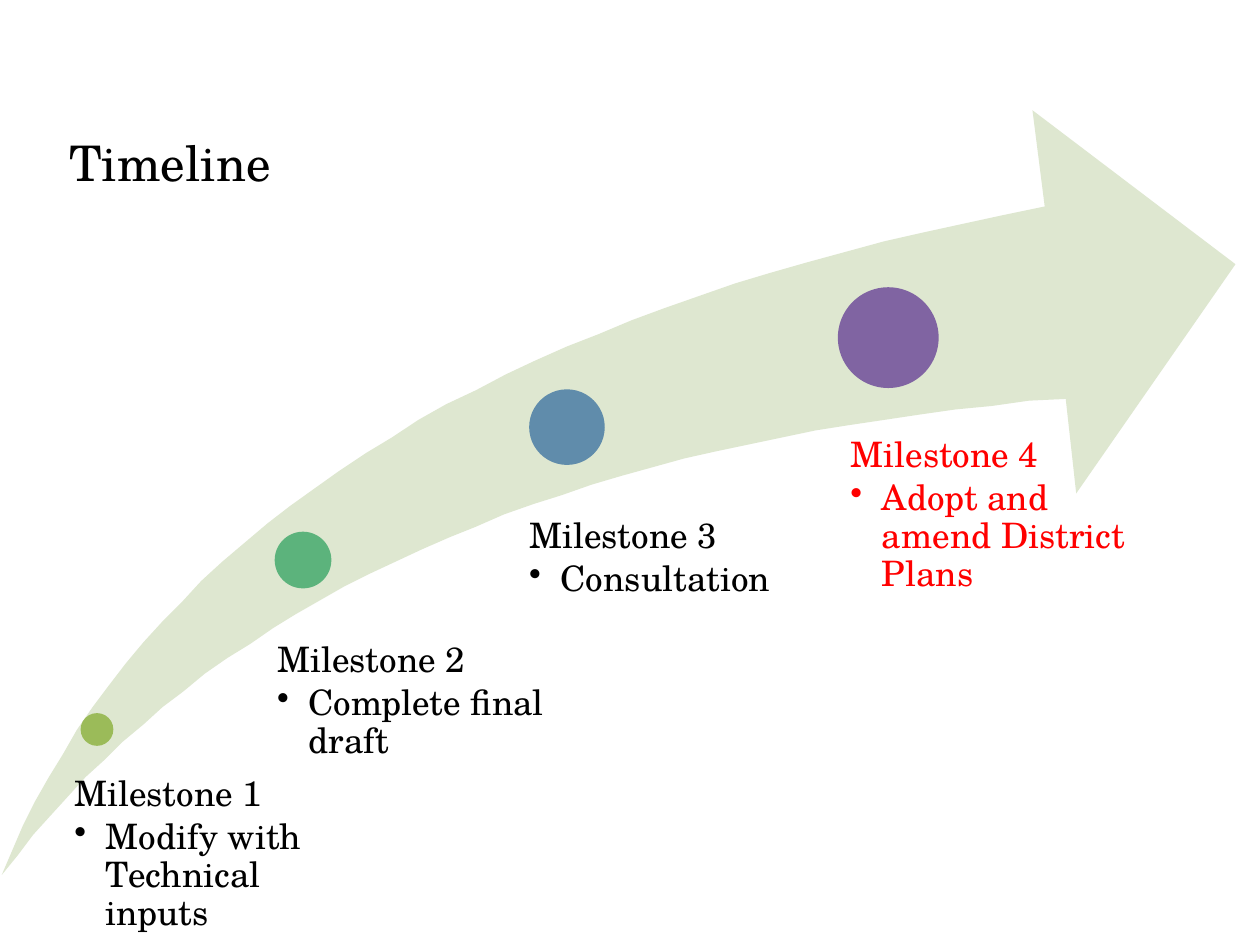
from lxml.etree import SubElement
from pptx import Presentation
from pptx.dml.color import RGBColor
from pptx.enum.shapes import MSO_SHAPE as Preset
from pptx.enum.text import MSO_ANCHOR as Anchor, PP_ALIGN as Align
from pptx.oxml.ns import qn
from pptx.util import Pt

FONT = "TeX Gyre Schola"
BLACK, RED = "000000", "FF0000"
INDENT = 18
CURVE_STEPS = 40

# Arrow outline in points
TAIL = (0.72, 500.4)
UPPER_EDGE = [TAIL, (79.2, 306), (277.92, 178.56), (596.88, 118.08)]
HEAD = [(590.4, 63.36), (705.6, 151.2), (614.88, 282.24)]
LOWER_EDGE = [(609.12, 227.52), (321.12, 251.28), (118.8, 342.72), TAIL]

# Dot: left, top, diameter, colour; label: left, top, width, height, colour
MILESTONES = [
    ("Modify with Technical inputs", (46.08, 407.52, 18.72, "9BBB59"),
     (42.48, 443.52, 167.76, 90, BLACK)),
    ("Complete final draft", (156.96, 303.84, 32.4, "5CB37C"),
     (158.4, 367.2, 170.64, 69.84, BLACK)),
    ("Consultation", (302.4, 222.48, 43.2, "608CAB"),
     (302.4, 295.92, 170.64, 46.8, BLACK)),
    ("Adopt and amend District Plans", (478.8, 164.16, 57.6, "8064A2"),
     (486, 249.84, 170.64, 90, RED)),
]


def rgb(value):
    return RGBColor.from_string(value)


def set_all(target, **values):
    for name, value in values.items():
        setattr(target, name, value)


def add_run(paragraph, text, size, color):
    run = paragraph.add_run()
    run.text = text
    set_all(run.font, name=FONT, size=Pt(size))
    run.font.color.rgb = rgb(color)


def paint(shape, color):
    shape.shadow.inherit = False
    shape.fill.solid()
    shape.fill.fore_color.rgb = rgb(color)
    shape.line.fill.background()


def curve_points(p0, p1, p2, p3):
    """Points along a cubic Bezier curve, without its start."""
    points = []
    for step in range(1, CURVE_STEPS + 1):
        t = step / CURVE_STEPS
        weights = ((1 - t) ** 3, 3 * t * (1 - t) ** 2, 3 * t ** 2 * (1 - t), t ** 3)
        points.append(tuple(
            sum(w * p[axis] for w, p in zip(weights, (p0, p1, p2, p3)))
            for axis in (0, 1)))
    return points


def add_title(slide, text):
    title = slide.shapes.title
    set_all(title, left=Pt(36), top=Pt(72), width=Pt(648), height=Pt(72))
    set_all(title.text_frame, vertical_anchor=Anchor.TOP, word_wrap=True,
            margin_left=Pt(3.6), margin_right=Pt(3.6),
            margin_top=Pt(3.6), margin_bottom=Pt(3.6))
    heading = title.text_frame.paragraphs[0]
    heading.alignment = Align.LEFT
    add_run(heading, text, 28, BLACK)


def add_arrow(slide):
    outline = curve_points(*UPPER_EDGE) + HEAD + [LOWER_EDGE[0]] + curve_points(*LOWER_EDGE)
    builder = slide.shapes.build_freeform(*TAIL, scale=Pt(1))
    builder.add_line_segments(outline, close=True)
    paint(builder.convert_to_shape(), "DEE7D0")


def add_dot(slide, left, top, diameter, color):
    dot = slide.shapes.add_shape(
        Preset.OVAL, Pt(left), Pt(top), Pt(diameter), Pt(diameter))
    paint(dot, color)


def add_bullet(paragraph):
    props = paragraph._p.get_or_add_pPr()
    props.set("marL", str(Pt(INDENT)))
    props.set("indent", str(-Pt(INDENT)))
    SubElement(props, qn("a:buChar"), char="•")


def add_label(slide, name, task, left, top, width, height, color):
    frame = slide.shapes.add_textbox(
        Pt(left), Pt(top), Pt(width), Pt(height)).text_frame
    set_all(frame, word_wrap=True, vertical_anchor=Anchor.TOP,
            margin_left=0, margin_right=0, margin_top=0, margin_bottom=0)
    heading = frame.paragraphs[0]
    heading.line_spacing = 0.9
    add_run(heading, name, 20, color)
    detail = frame.add_paragraph()
    set_all(detail, level=1, line_spacing=0.9, space_before=Pt(3))
    add_bullet(detail)
    add_run(detail, task, 20, color)


def main():
    deck = Presentation()
    set_all(deck, slide_width=Pt(720), slide_height=Pt(540))
    slide = deck.slides.add_slide(deck.slide_layouts[5])

    # Rising arrow behind the milestones
    add_arrow(slide)
    for number, (task, dot, label) in enumerate(MILESTONES, 1):
        add_dot(slide, *dot)
        add_label(slide, f"Milestone {number}", task, *label)

    add_title(slide, "Timeline")
    deck.save("out.pptx")


if __name__ == "__main__":
    main()
